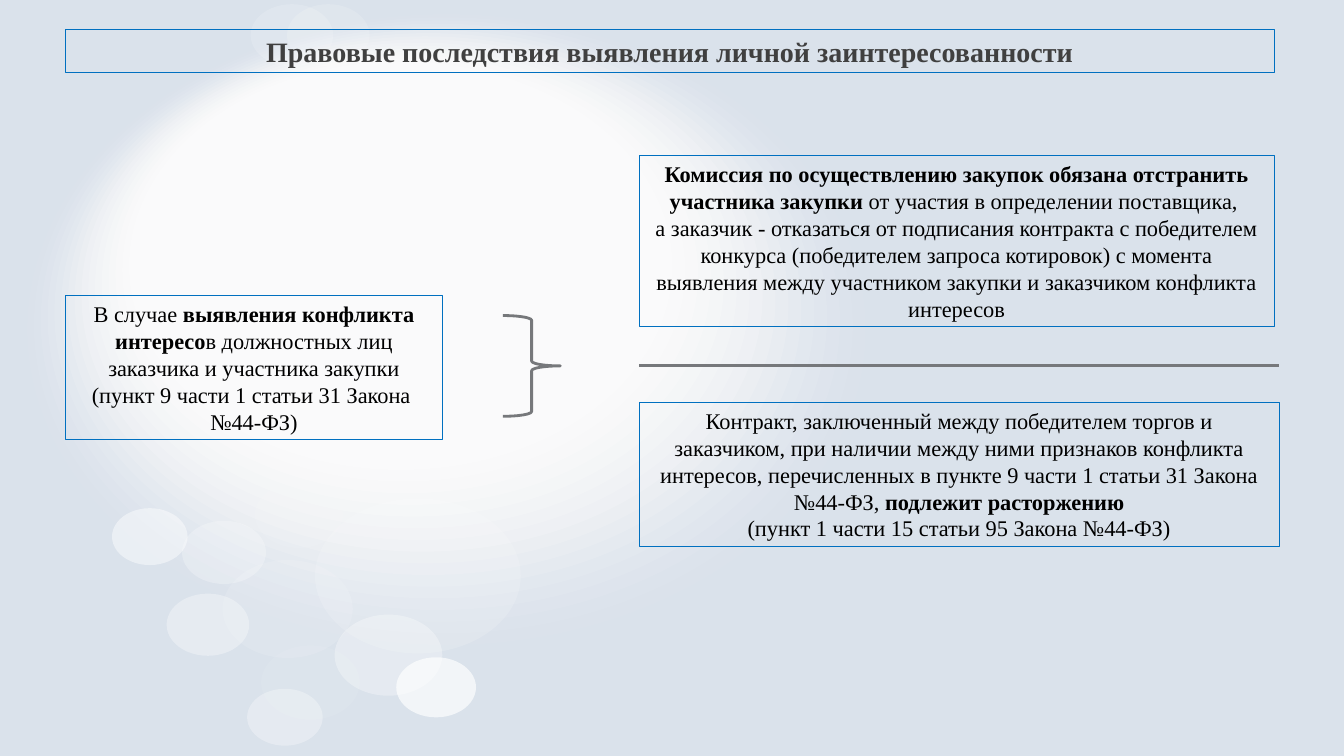
from lxml import etree
from pptx import Presentation
from pptx.dml.color import RGBColor
from pptx.enum.shapes import MSO_CONNECTOR, MSO_SHAPE
from pptx.enum.text import MSO_ANCHOR, MSO_AUTO_SIZE, PP_ALIGN
from pptx.oxml.ns import qn
from pptx.util import Pt

RECTANGLE, OVAL, BRACE = MSO_SHAPE.RECTANGLE, MSO_SHAPE.OVAL, MSO_SHAPE.RIGHT_BRACE
STRAIGHT = MSO_CONNECTOR.STRAIGHT
CENTER, MIDDLE, NO_AUTOFIT = PP_ALIGN.CENTER, MSO_ANCHOR.MIDDLE, MSO_AUTO_SIZE.NONE

FONT = "Times New Roman"
COLORS = {
    "background": "DAE2EB",
    "light": "FFFFFF",
    "border": "0070C0",
    "accent": "76787B",
    "title": "404040",
    "text": "000000",
}
TITLE_ONLY_LAYOUT = 5
GLOW_RINGS = 16
BUBBLE_RATIO = 0.753  # height to width

# left, top, width in points, opacity in percent
BUBBLES = [
    (159, 400, 93, 12), (225, 356, 147, 15), (80, 363, 54, 45),
    (182, 344, 63, 8), (130, 372, 60, 25), (119, 424, 59, 33),
    (186.5, 461, 70.5, 7), (176.5, 492, 54, 31), (283, 469.5, 57, 67),
    (239, 439, 77, 31), (205, 3, 59, 15), (179, 3, 59, 16),
]

# Each paragraph is a list of (text, bold) runs
CASE = [
    [("В случае ", False), ("выявления конфликта интересо", True),
     ("в должностных лиц заказчика и участника закупки", False)],
    [("(пункт 9 части 1 статьи 31 Закона ", False)],
    [("№44-ФЗ)", False)],
]
COMMISSION = [
    [("Комиссия по осуществлению закупок обязана отстранить участника закупки ", True),
     ("от участия в определении поставщика, ", False)],
    [("а заказчик - отказаться от подписания контракта с победителем конкурса "
      "(победителем запроса котировок) с момента выявления между участником "
      "закупки и заказчиком конфликта интересов", False)],
]
CONTRACT = [
    [("Контракт, заключенный между победителем торгов и заказчиком, при наличии "
      "между ними признаков конфликта интересов, перечисленных в пункте 9 части 1 "
      "статьи 31 Закона №44-ФЗ, ", False), ("подлежит расторжению", True)],
    [("(пункт 1 части 15 статьи 95 Закона №44-ФЗ)", False)],
]


def color(name):
    return RGBColor.from_string(COLORS[name])


def add_plain_shape(slide, kind, box):
    shape = slide.shapes.add_shape(kind, *(Pt(length) for length in box))
    shape.shadow.inherit = False
    shape.fill.background()
    return shape


def set_line(shape, name, width):
    shape.line.color.rgb = color(name)
    shape.line.width = Pt(width)


def set_font(paragraph, size, name):
    paragraph.alignment = CENTER
    paragraph.font.name = FONT
    paragraph.font.size = Pt(size)
    paragraph.font.color.rgb = color(name)


def set_frame(text_frame):
    text_frame.word_wrap = True
    text_frame.auto_size = NO_AUTOFIT
    text_frame.vertical_anchor = MIDDLE


def add_light_oval(slide, box, opacity):
    oval = add_plain_shape(slide, OVAL, box)
    oval.line.fill.background()
    oval.fill.solid()
    oval.fill.fore_color.rgb = color("light")
    fill_color = oval.element.spPr.find(qn("a:solidFill")).find(qn("a:srgbClr"))
    etree.SubElement(fill_color, qn("a:alpha"), val=str(round(opacity * 1000)))


def draw_backdrop(slide, box):
    left, top, _, _ = box
    slide.background.fill.solid()
    slide.background.fill.fore_color.rgb = color("background")
    for ring in range(GLOW_RINGS):
        ring_box = (left + 19.4 + 4.85 * ring, top + 10.1 + 2.26 * ring,
                    599 - 14.06 * ring, 450.7 - 10.6 * ring)
        add_light_oval(slide, ring_box, 3 + 1.6 * ring)
    for x, y, width, opacity in BUBBLES:
        add_light_oval(slide, (left + x, top + y, width, width * BUBBLE_RATIO), opacity)


def draw_title(slide, box):
    title = slide.shapes.title
    title.left, title.top, title.width, title.height = (Pt(length) for length in box)
    set_line(title, "border", 0.75)
    set_frame(title.text_frame)
    title.text_frame.text = "Правовые последствия выявления личной заинтересованности"
    paragraph = title.text_frame.paragraphs[0]
    set_font(paragraph, 20, "title")
    paragraph.font.bold = True
    # Bring the title in front of the backdrop
    title.element.getparent().append(title.element)


def draw_text_box(slide, box, paragraphs):
    shape = add_plain_shape(slide, RECTANGLE, box)
    set_line(shape, "border", 0.75)
    text_frame = shape.text_frame
    set_frame(text_frame)
    for index, runs in enumerate(paragraphs):
        paragraph = text_frame.add_paragraph() if index else text_frame.paragraphs[0]
        set_font(paragraph, 16, "text")
        for text, bold in runs:
            run = paragraph.add_run()
            run.text = text
            run.font.bold = bold


def draw_brace(slide, box):
    brace = add_plain_shape(slide, BRACE, box)
    brace.adjustments[0] = 0.083
    set_line(brace, "accent", 2)


def draw_outcomes(slide, box):
    """Two consequences, one above and one below a dividing line."""
    left, top, width, height = box
    contract_height = 103
    draw_text_box(slide, (left, top, width - 3.6, 122.4), COMMISSION)
    draw_text_box(slide, (left, top + height - contract_height, width, contract_height),
                  CONTRACT)
    divider_top = top + 150.3
    divider = slide.shapes.add_connector(
        STRAIGHT, Pt(left), Pt(divider_top), Pt(left + width), Pt(divider_top))
    set_line(divider, "accent", 2.25)
    etree.SubElement(divider.element.spPr, qn("a:effectLst"))


def main():
    presentation = Presentation()
    presentation.slide_width, presentation.slide_height = Pt(960), Pt(540)
    slide = presentation.slides.add_slide(presentation.slide_layouts[TITLE_ONLY_LAYOUT])
    draw_backdrop(slide, (0, 0, 960, 540))
    draw_text_box(slide, (46.8, 211, 269.3, 103), CASE)
    draw_brace(slide, (359.3, 225.4, 41, 72))
    draw_outcomes(slide, (456.5, 110.9, 457.2, 279.4))
    draw_title(slide, (46.8, 21, 863.3, 31))
    presentation.save("out.pptx")


if __name__ == "__main__":
    main()
